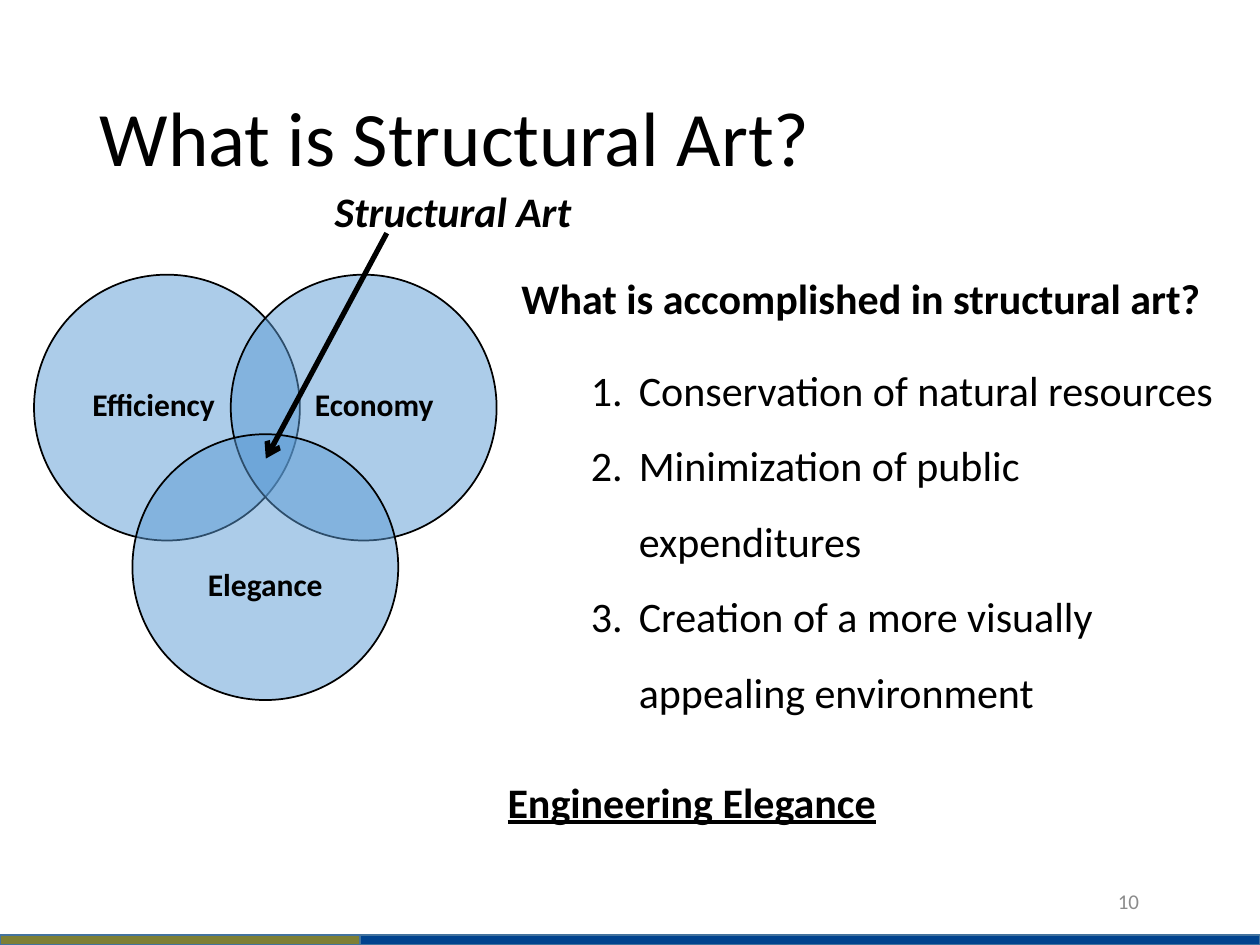
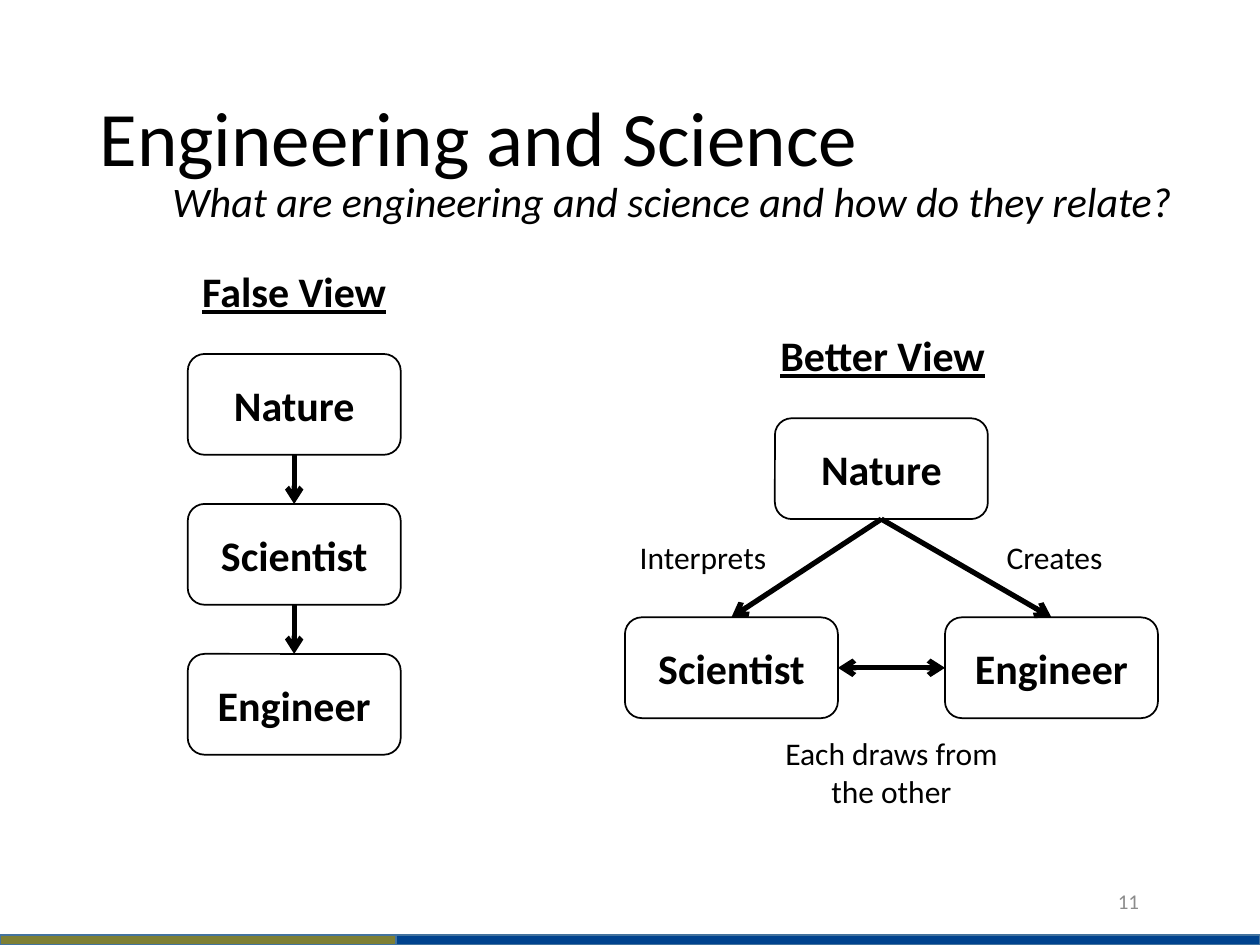
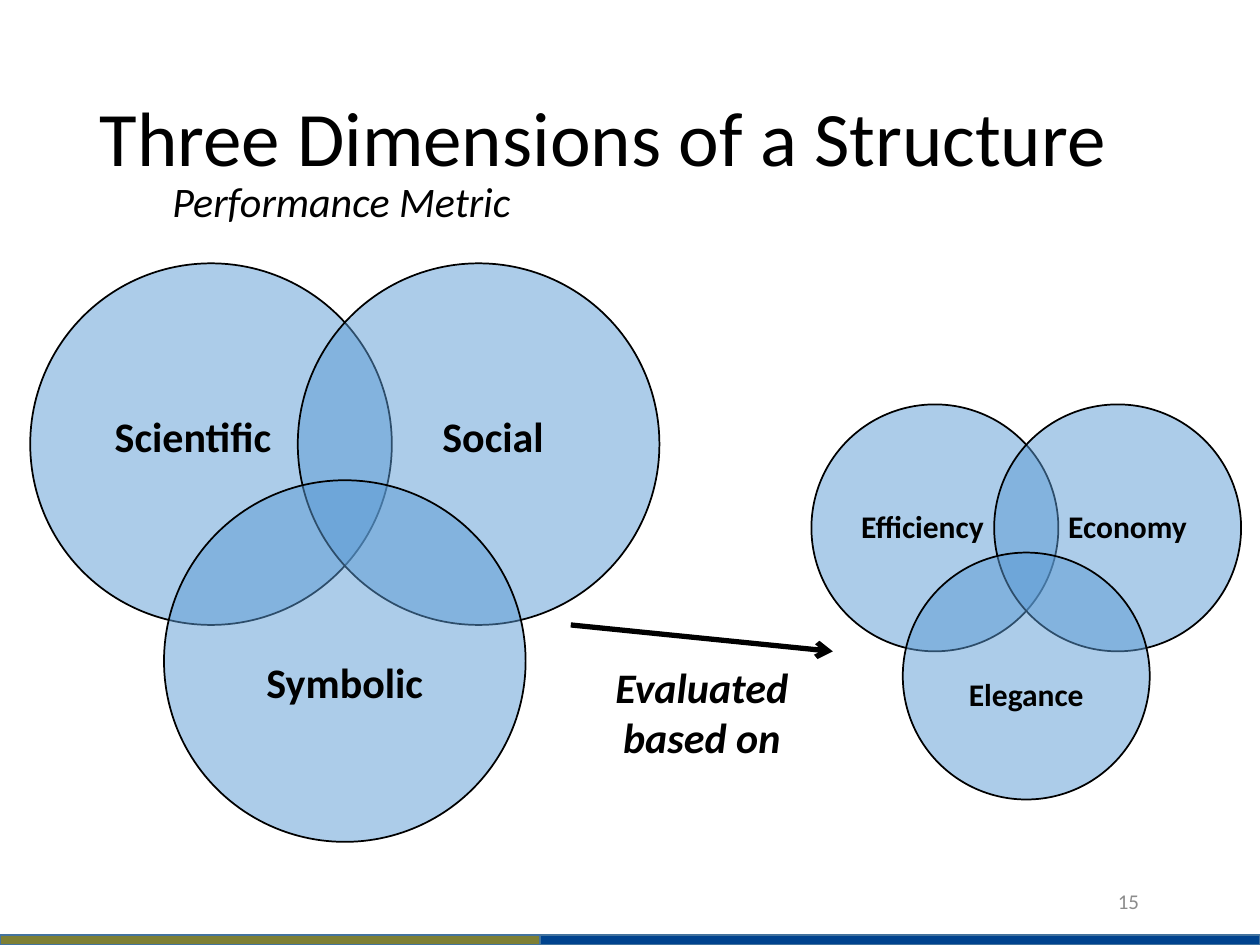
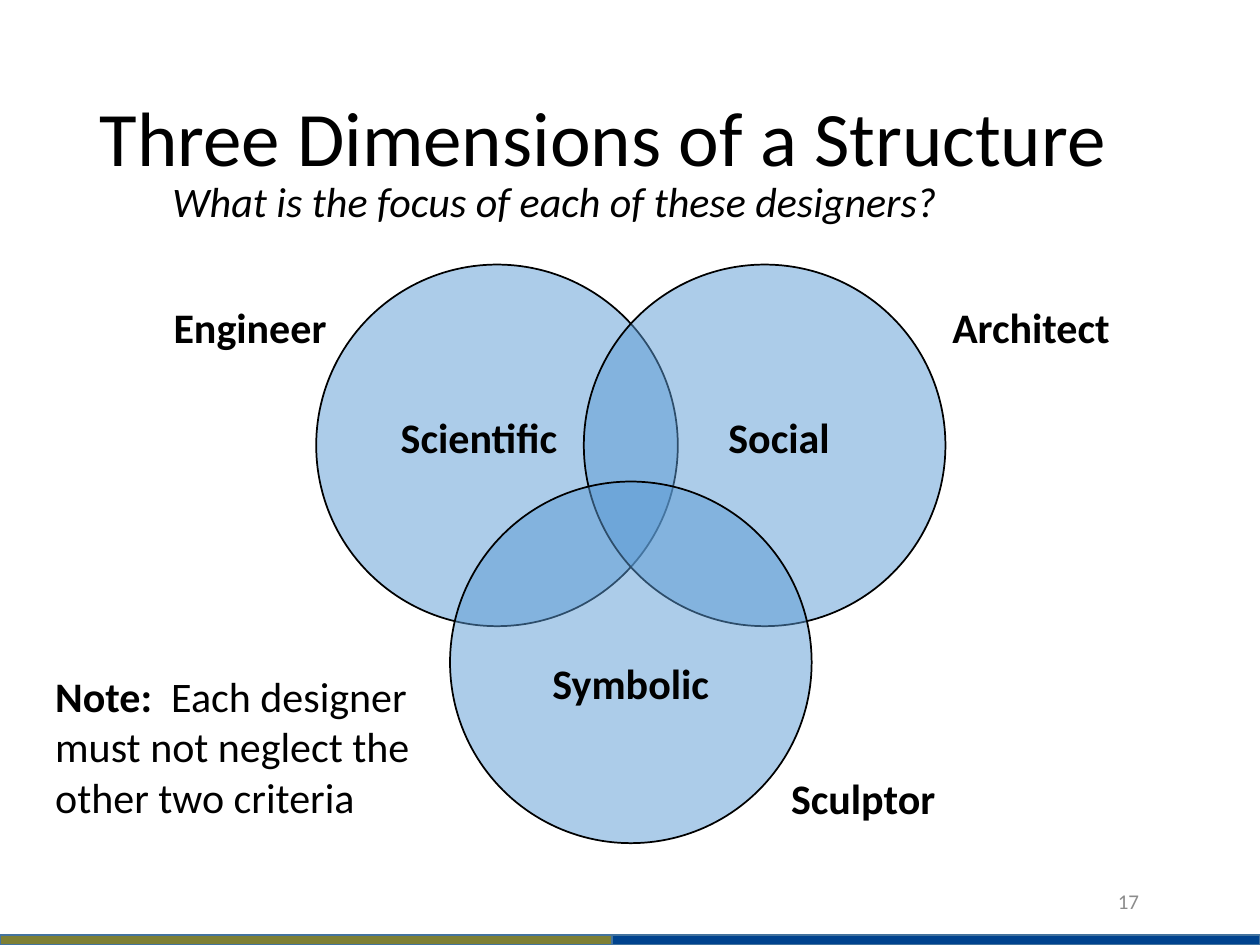
from lxml import etree
from pptx import Presentation
from pptx.dml.color import RGBColor
from pptx.enum.shapes import MSO_CONNECTOR, MSO_SHAPE
from pptx.enum.text import MSO_ANCHOR, MSO_AUTO_SIZE, PP_ALIGN
from pptx.oxml.ns import qn
from pptx.util import Inches, Pt

STRAIGHT = MSO_CONNECTOR.STRAIGHT
OVAL, RECTANGLE, ROUNDED = MSO_SHAPE.OVAL, MSO_SHAPE.RECTANGLE, MSO_SHAPE.ROUNDED_RECTANGLE
MIDDLE, TOP = MSO_ANCHOR.MIDDLE, MSO_ANCHOR.TOP
FIXED = MSO_AUTO_SIZE.NONE
LEFT, CENTER, RIGHT = PP_ALIGN.LEFT, PP_ALIGN.CENTER, PP_ALIGN.RIGHT

FONT = "Calibri"
BLACK, WHITE, GRAY = "000000", "FFFFFF", "8C8C8C"
CIRCLE_BLUE, BAR_BLUE, BAR_OLIVE, BAR_EDGE = "5B9BD5", "00438E", "7E7F34", "43739E"
LAST_PAGE = 35
SIDE_TOP, SIDE_LEFT, SIDE_BOTTOM, SIDE_RIGHT = range(4)


def paint(fill, color):
    fill.solid()
    fill.fore_color.rgb = RGBColor.from_string(color)


def write(shape, text, size=24, color=BLACK, bold=False, italic=False,
          underline=False, align=LEFT, anchor=TOP):
    frame = shape.text_frame
    frame.word_wrap = True
    frame.auto_size = FIXED
    frame.vertical_anchor = anchor
    para = frame.paragraphs[-1]
    para.alignment = align
    span = para.add_run()
    span.text = text
    span.font.name = FONT
    span.font.size = Pt(size)
    span.font.bold = bold
    span.font.italic = italic
    span.font.underline = underline
    paint(span.font.fill, color)
    return para


deck = Presentation()
deck.slide_width = Inches(10)
deck.slide_height = Inches(7.5)
list_layout, title_layout = deck.slide_layouts[1], deck.slide_layouts[5]

pages = []
for number, layout, title, subtitle in [
    (10, list_layout, "What is Structural Art?", None),
    (11, title_layout, "Engineering and Science",
     "What are engineering and science and how do they relate?"),
    (15, title_layout, "Three Dimensions of a Structure", "Performance Metric"),
    (17, title_layout, "Three Dimensions of a Structure",
     "What is the focus of each of these designers?"),
]:
    page = deck.slides.add_slide(layout)
    pages.append(page)
    heading = page.shapes.title
    heading.left, heading.top = Inches(0.69), Inches(0.4)
    heading.width, heading.height = Inches(8.62), Inches(1.45)
    write(heading, title, size=44, anchor=MIDDLE).line_spacing = 0.9
    if subtitle:
        box = page.shapes.add_textbox(Inches(1.27), Inches(1.34), Inches(8.7), Inches(0.5))
        write(box, subtitle, italic=True)
    box = page.shapes.add_textbox(Inches(7.98), Inches(6.95), Inches(1.16), Inches(0.4))
    write(box, str(number), size=12, color=GRAY, align=RIGHT, anchor=MIDDLE)
    for width, color in [(10, BAR_BLUE), (10 * number / LAST_PAGE, BAR_OLIVE)]:
        bar = page.shapes.add_shape(RECTANGLE, 0, Inches(7.42), Inches(width), Inches(0.08))
        bar.shadow.inherit = False
        paint(bar.fill, color)
        paint(bar.line.fill, BAR_EDGE)
        bar.line.width = Pt(0)

art_page, science_page, metric_page, focus_page = pages

criteria = ["Efficiency", "Economy", "Elegance"]
dimensions = ["Scientific", "Social", "Symbolic"]
for page, left, top, diameter, size, names in [
    (art_page, 0.27, 2.18, 2.11, 18, criteria),
    (metric_page, 0.24, 2.09, 2.87, 24, dimensions),
    (metric_page, 6.44, 3.21, 1.96, 18, criteria),
    (focus_page, 2.51, 2.1, 2.87, 24, dimensions),
]:
    for across, down in [(0, 0), (0.74, 0), (0.37, 0.6)]:
        circle = page.shapes.add_shape(
            OVAL, Inches(left + across * diameter), Inches(top + down * diameter),
            Inches(diameter), Inches(diameter))
        circle.shadow.inherit = False
        paint(circle.fill, CIRCLE_BLUE)
        tint = circle._element.spPr.find(qn("a:solidFill"))[0]
        etree.SubElement(tint, qn("a:alpha"), val="50000")
        paint(circle.line.fill, BLACK)
        circle.line.width = Pt(1)
    for name, (across, down) in zip(names, [(0.08, 0.39), (0.91, 0.39), (0.5, 1.07)]):
        box = page.shapes.add_textbox(
            Inches(left + across * diameter), Inches(top + down * diameter),
            Inches(0.74 * diameter), Inches(size / 48))
        write(box, name, size=size, bold=True, align=CENTER)

results = art_page.placeholders[1]
results.left, results.top = Inches(4.59), Inches(2.64)
results.width, results.height = Inches(5.19), Inches(3.07)
for index, result in enumerate([
    "Conservation of natural resources",
    "Minimization of public expenditures",
    "Creation of a more visually appealing environment",
]):
    if index:
        results.text_frame.add_paragraph()
    properties = results.text_frame.paragraphs[-1]._p.get_or_add_pPr()
    properties.set("marL", str(Inches(0.38)))
    properties.set("indent", str(Inches(-0.38)))
    etree.SubElement(properties, qn("a:buFont"), typeface=FONT)
    etree.SubElement(properties, qn("a:buAutoNum"), type="arabicPeriod")
    para = write(results, result)
    para.line_spacing = 1.5
    para.space_before = Pt(0)

roles = []
for left, top, role in [
    (1.49, 2.81, "Nature"), (1.49, 4, "Scientist"), (1.49, 5.19, "Engineer"),
    (6.15, 3.32, "Nature"), (4.96, 4.9, "Scientist"), (7.5, 4.9, "Engineer"),
]:
    box = science_page.shapes.add_shape(
        ROUNDED, Inches(left), Inches(top), Inches(1.69), Inches(0.8))
    box.shadow.inherit = False
    paint(box.fill, WHITE)
    paint(box.line.fill, BLACK)
    box.line.width = Pt(1)
    write(box, role, bold=True, align=CENTER, anchor=MIDDLE)
    roles.append(box)
false_nature, false_scientist, false_engineer, nature, scientist, engineer = roles

arrows = []
for page, *ends in [
    (art_page, 3.07, 1.85, 2.11, 3.64),
    (metric_page, 4.53, 4.96, 6.61, 5.17),
]:
    arrows.append(page.shapes.add_connector(STRAIGHT, *map(Inches, ends)))
for source, source_side, target, target_side in [
    (false_nature, SIDE_BOTTOM, false_scientist, SIDE_TOP),
    (false_scientist, SIDE_BOTTOM, false_engineer, SIDE_TOP),
    (nature, SIDE_BOTTOM, scientist, SIDE_TOP),
    (nature, SIDE_BOTTOM, engineer, SIDE_TOP),
    (scientist, SIDE_RIGHT, engineer, SIDE_LEFT),
]:
    arrow = science_page.shapes.add_connector(STRAIGHT, 0, 0, 0, 0)
    arrow.begin_connect(source, source_side)
    arrow.end_connect(target, target_side)
    arrows.append(arrow)
for arrow in arrows:
    paint(arrow.line.fill, BLACK)
    arrow.line.width = Pt(3)
    outline = arrow.line._get_or_add_ln()
    if arrow is arrows[-1]:
        etree.SubElement(outline, qn("a:headEnd"), type="arrow")
    etree.SubElement(outline, qn("a:tailEnd"), type="arrow")
    etree.SubElement(arrow._element.spPr, qn("a:effectLst"))

strong = {"bold": True}
view = {"bold": True, "underline": True, "align": CENTER}
slanted = {"bold": True, "italic": True, "align": CENTER}
for page, left, top, width, height, text, style in [
    (art_page, 2.3, 1.42, 2.59, 0.5, "Structural Art", slanted),
    (art_page, 4.04, 2.11, 5.78, 0.5, "What is accomplished in structural art?", strong),
    (art_page, 3.32, 6.11, 4.34, 0.5, "Engineering Elegance", view),
    (science_page, 0.85, 2.06, 2.97, 0.5, "False View", view),
    (science_page, 5.52, 2.57, 2.97, 0.5, "Better View", view),
    (science_page, 4.58, 4.22, 1.6, 0.4, "Interprets", {"size": 18, "align": RIGHT}),
    (science_page, 7.89, 4.22, 1.6, 0.4, "Creates", {"size": 18}),
    (science_page, 6.09, 5.78, 1.97, 0.71, "Each draws from the other",
     {"size": 18, "align": CENTER}),
    (metric_page, 4.48, 5.2, 2.18, 0.91, "Evaluated based on", slanted),
    (focus_page, 1.02, 2.34, 1.67, 0.5, "Engineer", {"bold": True, "align": RIGHT}),
    (focus_page, 7.46, 2.34, 1.86, 0.5, "Architect", strong),
    (focus_page, 6.18, 6.08, 1.56, 0.5, "Sculptor", strong),
]:
    box = page.shapes.add_textbox(Inches(left), Inches(top), Inches(width), Inches(height))
    write(box, text, **style)

note = focus_page.shapes.add_textbox(Inches(0.34), Inches(5.27), Inches(3.04), Inches(1.31))
write(note, "Note:", bold=True)
write(note, "  Each designer must not neglect the other two criteria")

deck.save("out.pptx")
